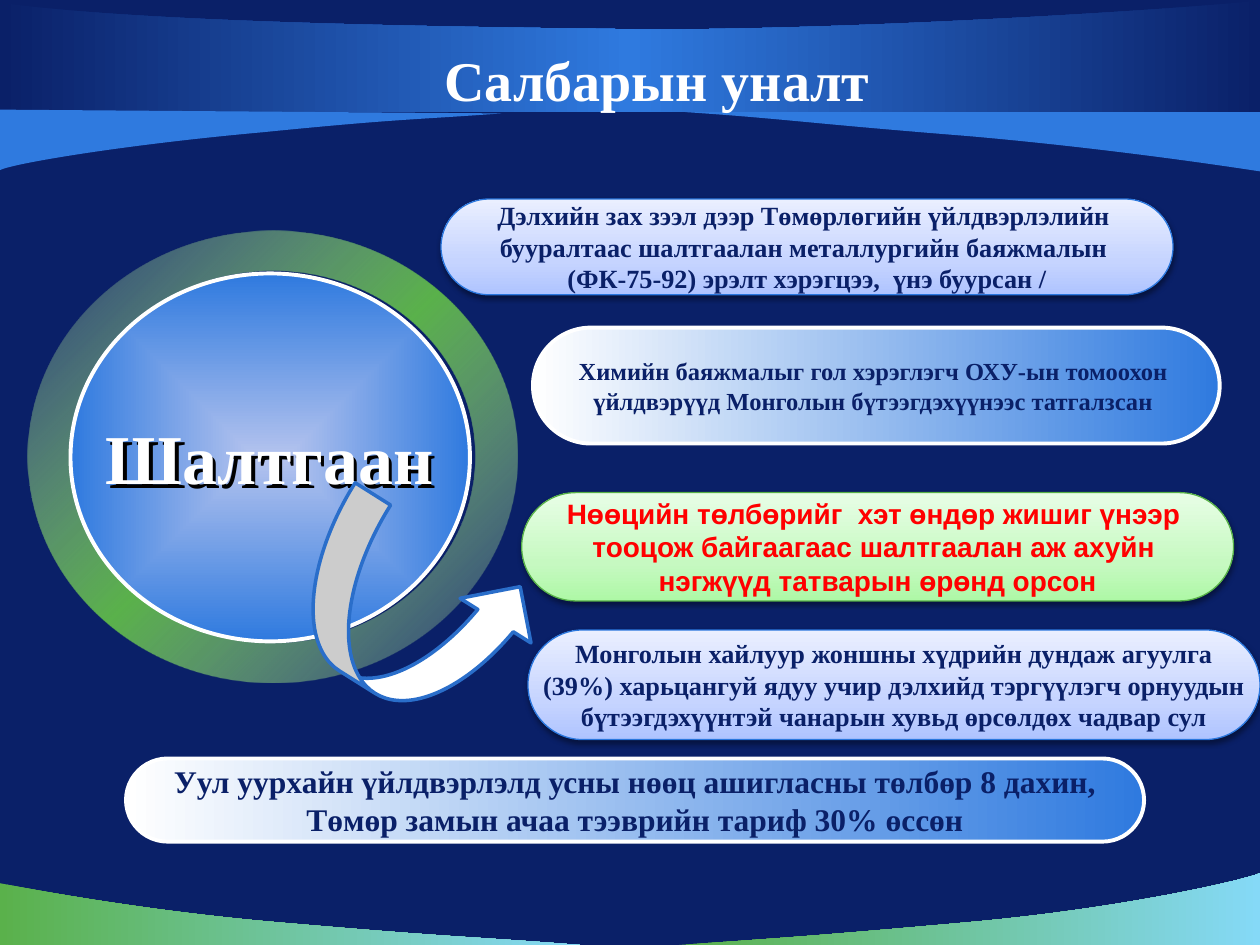
from pptx import Presentation
from pptx.dml.color import RGBColor
from pptx.enum.shapes import MSO_SHAPE
from pptx.enum.text import MSO_ANCHOR, PP_ALIGN
from pptx.oxml import parse_xml
from pptx.oxml.ns import nsdecls, qn
from pptx.util import Inches, Pt

ROUND, OVAL, ARROW = MSO_SHAPE.ROUNDED_RECTANGLE, MSO_SHAPE.OVAL, MSO_SHAPE.CURVED_UP_ARROW
MIDDLE, CENTER = MSO_ANCHOR.MIDDLE, PP_ALIGN.CENTER
NAVY, BLUE, GREEN, SKY, WHITE = "0A2068", "2F7ADF", "5AB14B", "85D9F7", "FFFFFF"
SERIF = "Times New Roman"
ACROSS = '<a:lin ang="0" scaled="1"/>'
DIAGONAL = '<a:lin ang="2700000" scaled="1"/>'
UPWARD = '<a:lin ang="16200000" scaled="0"/>'
RADIAL = '<a:path path="shape"><a:fillToRect l="50000" t="50000" r="50000" b="50000"/></a:path>'
SHADOW = ('<a:outerShdw %s blurRad="%d" dist="%d" dir="%d" algn="ctr" rotWithShape="0">'
          '<a:srgbClr val="000000"><a:alpha val="%d"/></a:srgbClr></a:outerShdw>')


def paint(sp, stops, direction="", line=None, width=0):
    sp.shadow.inherit = False
    sp.fill.solid()
    if isinstance(stops, str):
        sp.fill.fore_color.rgb = RGBColor.from_string(stops)
    else:
        gs = "".join(
            f'<a:gs pos="{pos * 1000}"><a:srgbClr val="{color}">'
            f'<a:alpha val="{alpha * 1000}"/></a:srgbClr></a:gs>'
            for pos, color, alpha in stops)
        grad = parse_xml(f'<a:gradFill {nsdecls("a")} rotWithShape="1">'
                         f'<a:gsLst>{gs}</a:gsLst>{direction}</a:gradFill>')
        props = sp._element.spPr
        props.replace(props.find(qn("a:solidFill")), grad)
    if line:
        sp.line.color.rgb = RGBColor.from_string(line)
        sp.line.width = Pt(width)
    else:
        sp.line.fill.background()


def write(sp, lines, size, color, font=SERIF):
    tf = sp.text_frame
    tf.word_wrap = False
    tf.vertical_anchor = MIDDLE
    for i, text in enumerate(lines):
        p = tf.paragraphs[0] if i == 0 else tf.add_paragraph()
        p.alignment = CENTER
        r = p.add_run()
        r.text = text
        r.font.size = Pt(size)
        r.font.bold = True
        r.font.name = font
        r.font.color.rgb = RGBColor.from_string(color)


prs = Presentation()
prs.slide_width, prs.slide_height = Inches(10), Inches(7.5)
s = prs.slides.add_slide(prs.slide_layouts[6])
s.background.fill.solid()
s.background.fill.fore_color.rgb = RGBColor.from_string(NAVY)

meadow = [(0, GREEN, 100), (100, SKY, 100)]
banner = [(0, NAVY, 100), (50, BLUE, 100), (100, NAVY, 100)]
halo = [(0, "B4D4B0", 12), (50, GREEN, 100), (100, "B4D4B0", 12)]
curved_shapes = [
    (meadow, ACROSS, [[(4.6, 7.5), (3.84, 7.44, 3.58, 7.44, 2.32, 7.33),
                       (1.06, 7.23, 0.01, 7.01, 0, 7.01), (0, 7.5)]]),
    (meadow, ACROSS, [[(5.39, 7.5), (6.14, 7.45, 6.46, 7.43, 7.69, 7.32),
                       (8.92, 7.21, 9.9, 6.98, 10, 6.93), (10, 7.5)]]),
    (BLUE, "", [[(5.44, 0.89), (6.2, 0.94, 6.42, 0.98, 7.68, 1.08),
                 (8.94, 1.19, 9.99, 1.36, 10, 1.36), (10, 0.88)]]),
    (banner, ACROSS, [[(0, 0.89), (10, 0.89), (10, 0), (9.64, 0.06, 6.53, 0.26, 4.87, 0.23),
                       (3.21, 0.21, 1.01, 0.17, 0, 0.02)]]),
    (BLUE, "", [[(3.98, 0.9), (3.31, 0.95, 3.18, 0.94, 2.08, 1.05),
                 (0.97, 1.15, 0.09, 1.3, 0, 1.35), (0, 0.87)]]),
    (halo, DIAGONAL, [
        [(0.22, 3.62), (0.22, 2.64, 1.09, 1.83, 2.17, 1.83), (3.24, 1.83, 4.11, 2.64, 4.11, 3.62),
         (4.11, 4.61, 3.24, 5.42, 2.17, 5.42), (1.09, 5.42, 0.22, 4.61, 0.22, 3.62)],
        [(0.57, 3.62), (0.57, 4.44, 1.28, 5.1, 2.17, 5.1), (3.05, 5.1, 3.77, 4.44, 3.77, 3.62),
         (3.77, 2.81, 3.05, 2.15, 2.17, 2.15), (1.28, 2.15, 0.57, 2.81, 0.57, 3.62)]]),
]
for stops, direction, contours in curved_shapes:
    builder = None
    counts = []
    for start, *segments in contours:
        x, y = start
        if builder is None:
            builder = s.shapes.build_freeform(Inches(x), Inches(y))
        else:
            builder.move_to(Inches(x), Inches(y))
        points = [(Inches(seg[i]), Inches(seg[i + 1]))
                  for seg in segments for i in range(0, len(seg), 2)]
        counts += [len(seg) // 2 for seg in segments]
        builder.add_line_segments(points, close=True)
    sp = builder.convert_to_shape()
    steps = iter(list(sp._element.iter(qn("a:lnTo"))))
    for count in counts:
        group = [next(steps) for _ in range(count)]
        if count == 3:
            bezier = parse_xml(f'<a:cubicBezTo {nsdecls("a")}/>')
            group[0].addprevious(bezier)
            for step in group:
                bezier.append(step[0])
                step.getparent().remove(step)
    paint(sp, stops, direction)

title = s.shapes.add_textbox(Inches(0.62), Inches(0.31), Inches(9.08), Inches(0.63))
write(title, [" Салбарын уналт"], 32, WHITE)

disc = s.shapes.add_shape(OVAL, Inches(0.56), Inches(2.17), Inches(3.17), Inches(2.92))
paint(disc, [(0, "B4C3EE", 100), (100, BLUE, 100)], RADIAL, WHITE, 2.25)

label = s.shapes.add_textbox(Inches(0.55), Inches(2.7), Inches(3.18), Inches(1.85))
write(label, ["Шалтгаан"], 40, WHITE)
label_shadow = parse_xml(f'<a:effectLst {nsdecls("a")}>'
                         + SHADOW % ("", 0, Pt(2.8), 2700000, 100000) + '</a:effectLst>')
label._element.spPr.append(label_shadow)

fade = ([(0, WHITE, 100), (100, BLUE, 100)], ACROSS, WHITE, 2.25)
pale_blue = ([(0, "AFC4FF", 100), (35, "C6D4FF", 100), (100, "EAEFFF", 100)],
             UPWARD, "2A77DE", 0.75)
pale_green = ([(0, "AEF8A6", 100), (35, "C6F9C1", 100), (100, "E8FEE6", 100)],
              UPWARD, "56B047", 0.75)
causes = [
    (4.23, 2.6, 5.45, 0.92, fade, 14, NAVY, SERIF,
     ["Химийн баяжмалыг гол хэрэглэгч ОХУ-ын томоохон ",
      "үйлдвэрүүд Монголын бүтээгдэхүүнээс татгалзсан "]),
    (3.5, 1.58, 5.81, 0.76, pale_blue, 15, NAVY, SERIF,
     ["Дэлхийн зах зээл дээр Төмөрлөгийн үйлдвэрлэлийн ",
      "бууралтаас шалтгаалан металлургийн баяжмалын ",
      "(ФК-75-92) эрэлт хэрэгцээ,  үнэ буурсан /"]),
    (4.19, 5, 5.81, 0.87, pale_blue, 15, NAVY, SERIF,
     ["Монголын хайлуур жоншны хүдрийн дундаж агуулга",
      " (39%) харьцангуй ядуу учир дэлхийд тэргүүлэгч орнуудын ",
      "бүтээгдэхүүнтэй чанарын хувьд өрсөлдөх чадвар сул"]),
    (1, 6.02, 8.08, 0.66, fade, 18, NAVY, SERIF,
     ["Уул уурхайн үйлдвэрлэлд усны нөөц ашигласны төлбөр 8 дахин,",
      "Төмөр замын ачаа тээврийн тариф 30% өссөн"]),
    (4.14, 3.91, 5.65, 0.86, pale_green, 16, "FF0000", "Arial",
     ["Нөөцийн төлбөрийг  хэт өндөр жишиг үнээр ",
      "тооцож байгаагаас шалтгаалан аж ахуйн ",
      "нэгжүүд татварын өрөнд орсон"]),
]
for x, y, w, h, style, size, color, font, lines in causes:
    sp = s.shapes.add_shape(ROUND, Inches(x), Inches(y), Inches(w), Inches(h))
    sp.adjustments[0] = 0.5
    paint(sp, *style)
    if style is not fade:
        shadow = parse_xml(SHADOW % (nsdecls("a"), Pt(3.1), Pt(1.6), 5400000, 38000))
        sp._element.spPr.find(qn("a:effectLst")).append(shadow)
    write(sp, lines, size, color, font)

arrow = s.shapes.add_shape(ARROW, Inches(2.32), Inches(4.23), Inches(1.88), Inches(1.33))
arrow.rotation = 32.2
paint(arrow, WHITE, line="2A6ECA", width=2)

prs.save("out.pptx")
